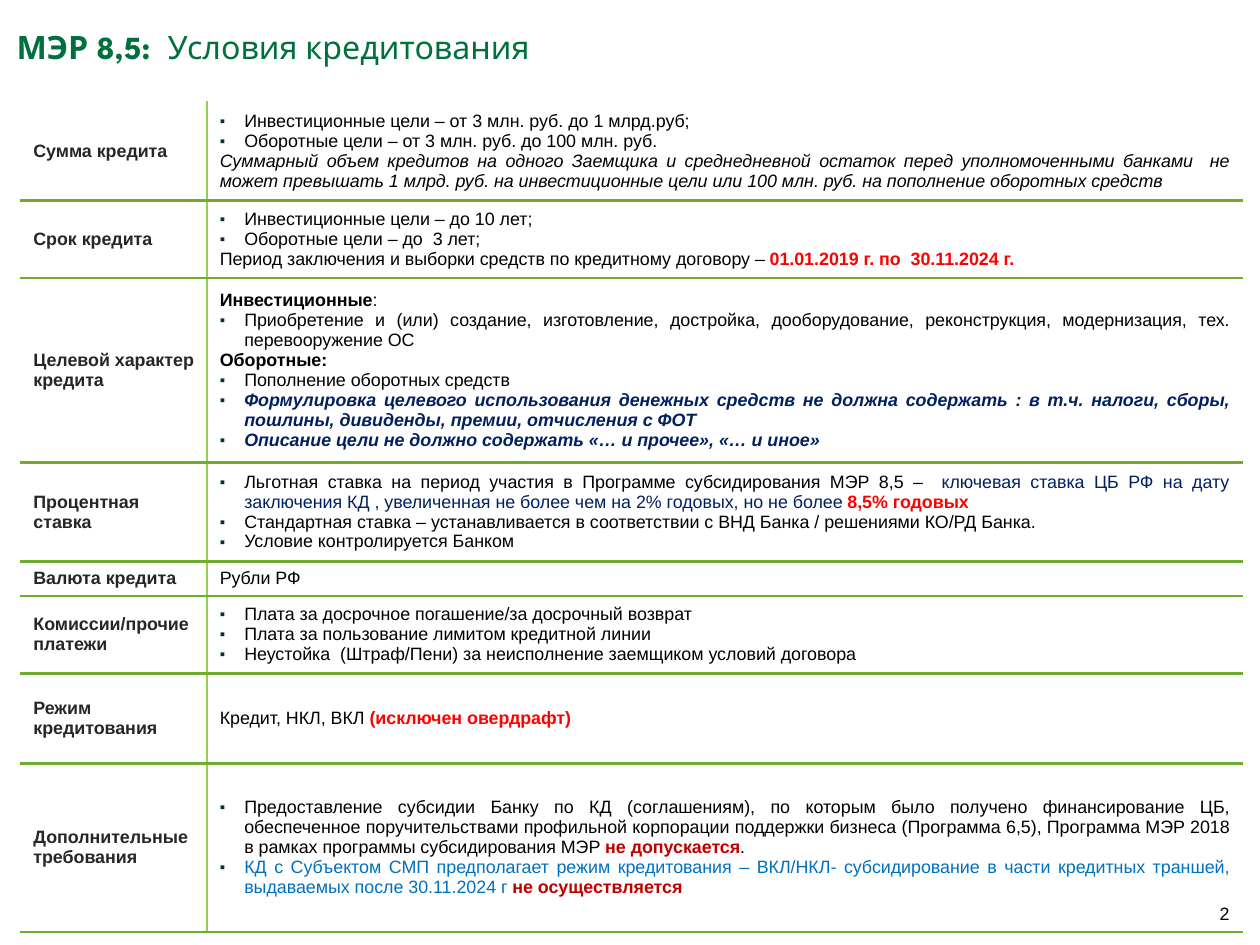
from lxml.etree import SubElement
from pptx import Presentation
from pptx.dml.color import RGBColor as Rgb
from pptx.enum.text import MSO_ANCHOR as Anchor, PP_ALIGN as Align
from pptx.oxml.ns import qn
from pptx.util import Inches, Pt

GRID_STEP = 0.1
GRID_COLUMNS, GRID_ROWS = 98, 73.5
COLORS = {
    "title": "00703C", "label": "262626", "black": "000000", "bullet": "003A1E",
    "navy": "002060", "blue": "0070C0", "red": "FF0000", "dark_red": "C00000",
    "row_line": "70AC2E", "column_line": "92D050", "edge": "FFFFFF",
}
FORMATS = {
    "heading": ("title", {"size": Pt(18), "name": "League Spartan", "bold": True}),
    "subject": ("title", {"size": Pt(18), "name": "League Spartan"}),
    "label": ("label", {"bold": True}),
    "plain": ("black", {}),
    "strong": ("black", {"bold": True}),
    "note": ("black", {"italic": True}),
    "rule": ("navy", {"bold": True, "italic": True}),
    "navy": ("navy", {}),
    "blue": ("blue", {}),
    "red": ("red", {"bold": True}),
    "dark_red": ("dark_red", {"bold": True}),
}
BASE_FONT = {"size": Pt(10), "name": "Arial", "bold": False, "italic": False}


def line(text, style="plain", *more):
    return False, [(text, style), *more]


def item(text, style="plain", *more):
    return True, [(text, style), *more]


CONDITIONS = [
    ("Сумма кредита", 7.7, [
        item("Инвестиционные цели – от 3 млн. руб. до 1 млрд.руб;"),
        item("Оборотные цели – от 3 млн. руб. до 100 млн. руб."),
        line("Суммарный объем кредитов на одного Заемщика и среднедневной остаток перед "
             "уполномоченными банками  не может превышать 1 млрд. руб. на инвестиционные "
             "цели или 100 млн. руб. на пополнение оборотных средств", "note"),
    ]),
    ("Срок кредита", 6, [
        item("Инвестиционные цели – до 10 лет;"),
        item("Оборотные цели – до  3 лет;"),
        line("Период заключения и выборки средств по кредитному договору – ", "plain",
             ("01.01.2019 г. по  30.11.2024 г.", "red")),
    ]),
    ("Целевой характер кредита", 14.3, [
        line("Инвестиционные", "strong", (":", "plain")),
        item("Приобретение и (или) создание, изготовление, достройка, дооборудование, "
             "реконструкция, модернизация, тех. перевооружение ОС"),
        line("Оборотные:", "strong"),
        item("Пополнение оборотных средств"),
        item("Формулировка целевого использования денежных средств не должна содержать : "
             "в т.ч. налоги, сборы, пошлины, дивиденды, премии, отчисления с ФОТ", "rule"),
        item("Описание цели не должно содержать «… и прочее», «… и иное»", "rule"),
    ]),
    ("Процентная ставка", 7.7, [
        item("Льготная ставка на период участия в Программе субсидирования МЭР 8,5 –  ", "plain",
             ("ключевая ставка ЦБ РФ на дату заключения КД , увеличенная не более чем "
              "на 2% годовых, но не более ", "navy"),
             ("8,5% годовых", "red")),
        item("Стандартная ставка – устанавливается в соответствии с ВНД Банка / "
             "решениями КО/РД Банка."),
        item("Условие контролируется Банком"),
    ]),
    ("Валюта кредита", 2.7, [line("Рубли РФ")]),
    ("Комиссии/прочие платежи", 6, [
        item("Плата за досрочное погашение/за досрочный возврат"),
        item("Плата за пользование лимитом кредитной линии"),
        item("Неустойка  (Штраф/Пени) за неисполнение заемщиком условий договора"),
    ]),
    ("Режим кредитования", 7, [
        line("Кредит, НКЛ, ВКЛ ", "plain", ("(исключен овердрафт)", "red")),
    ]),
    ("Дополнительные требования", 13.1, [
        item("Предоставление субсидии Банку по КД (соглашениям), по которым было получено "
             "финансирование ЦБ, обеспеченное поручительствами профильной корпорации "
             "поддержки бизнеса (Программа 6,5), Программа МЭР 2018 в рамках программы "
             "субсидирования МЭР ", "plain", ("не допускается", "dark_red"), (".", "plain")),
        item("КД с Субъектом СМП предполагает режим кредитования – ВКЛ/НКЛ- субсидирование "
             "в части кредитных траншей, выдаваемых после 30.11.2024 г ", "blue",
             ("не осуществляется", "dark_red")),
    ]),
]


class LoanSlide:
    """Draws the loan terms slide on a grid of equal steps."""

    def __init__(self, deck):
        deck.slide_width, deck.slide_height = self.steps(GRID_COLUMNS), self.steps(GRID_ROWS)
        self.slide = deck.slides.add_slide(deck.slide_layouts[6])

    def steps(self, count):
        return Inches(count * GRID_STEP)

    def paragraphs(self, frame, lines, align):
        for index, (bulleted, runs) in enumerate(lines):
            paragraph = frame.add_paragraph() if index else frame.paragraphs[0]
            paragraph.alignment = align
            if bulleted:
                self.bullet(paragraph)
            for text, style in runs:
                run = paragraph.add_run()
                run.text = text
                color, changes = FORMATS[style]
                for name, value in {**BASE_FONT, **changes}.items():
                    setattr(run.font, name, value)
                run.font.color.rgb = Rgb.from_string(COLORS[color])

    def bullet(self, paragraph):
        props = paragraph._p.get_or_add_pPr()
        indent = Inches(0.19)
        props.set("marL", str(indent))
        props.set("indent", str(-indent))
        SubElement(SubElement(props, qn("a:buClr")), qn("a:srgbClr"), val=COLORS["bullet"])
        SubElement(props, qn("a:buSzPct"), val="85000")
        SubElement(props, qn("a:buFont"), typeface="Arial")
        SubElement(props, qn("a:buChar"), char="▪")

    def text(self, box, lines, align, anchor, wrap):
        frame = self.slide.shapes.add_textbox(*map(self.steps, box)).text_frame
        settings = {"margin_left": 0, "margin_right": 0, "margin_top": 0, "margin_bottom": 0,
                    "vertical_anchor": anchor, "word_wrap": wrap}
        for name, value in settings.items():
            setattr(frame, name, value)
        self.paragraphs(frame, lines, align)

    def borders(self, cell, sides):
        props = cell._tc.get_or_add_tcPr()
        for side, color in sides.items():
            width = Pt(1 if color == "edge" else 1.5)
            border = SubElement(props, qn(f"a:ln{side}"), w=str(width))
            fill = SubElement(border, qn("a:solidFill"))
            SubElement(fill, qn("a:srgbClr"), val=COLORS[color])

    def table(self, left, top, widths, conditions):
        heights = [height for _, height, _ in conditions]
        box = map(self.steps, (left, top, sum(widths), sum(heights)))
        table = self.slide.shapes.add_table(len(heights), len(widths), *box).table
        table.first_row = table.horz_banding = False
        for column, width in zip(table.columns, widths):
            column.width = self.steps(width)
        for index, (label, height, terms) in enumerate(conditions):
            table.rows[index].height = self.steps(height)
            contents = (([line(label, "label")], Align.LEFT, "edge", "column_line"),
                        (terms, Align.JUSTIFY, "column_line", "edge"))
            for column, (lines, align, before, after) in enumerate(contents):
                cell = table.cell(index, column)
                self.borders(cell, {"L": before, "R": after,
                                    "T": "row_line" if index else "edge", "B": "row_line"})
                cell.fill.background()
                cell.vertical_anchor = Anchor.MIDDLE
                self.paragraphs(cell.text_frame, lines, align)


def main():
    deck = Presentation()
    page = LoanSlide(deck)
    page.text((94.1, 70.2, 2.3, 1.7), [line("2")], Align.CENTER, Anchor.MIDDLE, False)
    page.text((1.3, 2.1, 74.1, 3),
              [line("МЭР 8,5:  ", "heading", ("Условия кредитования", "subject"))],
              Align.LEFT, Anchor.BOTTOM, True)
    page.table(1.6, 7.9, (14.5, 80.5), CONDITIONS)
    deck.save("out.pptx")


if __name__ == "__main__":
    main()
